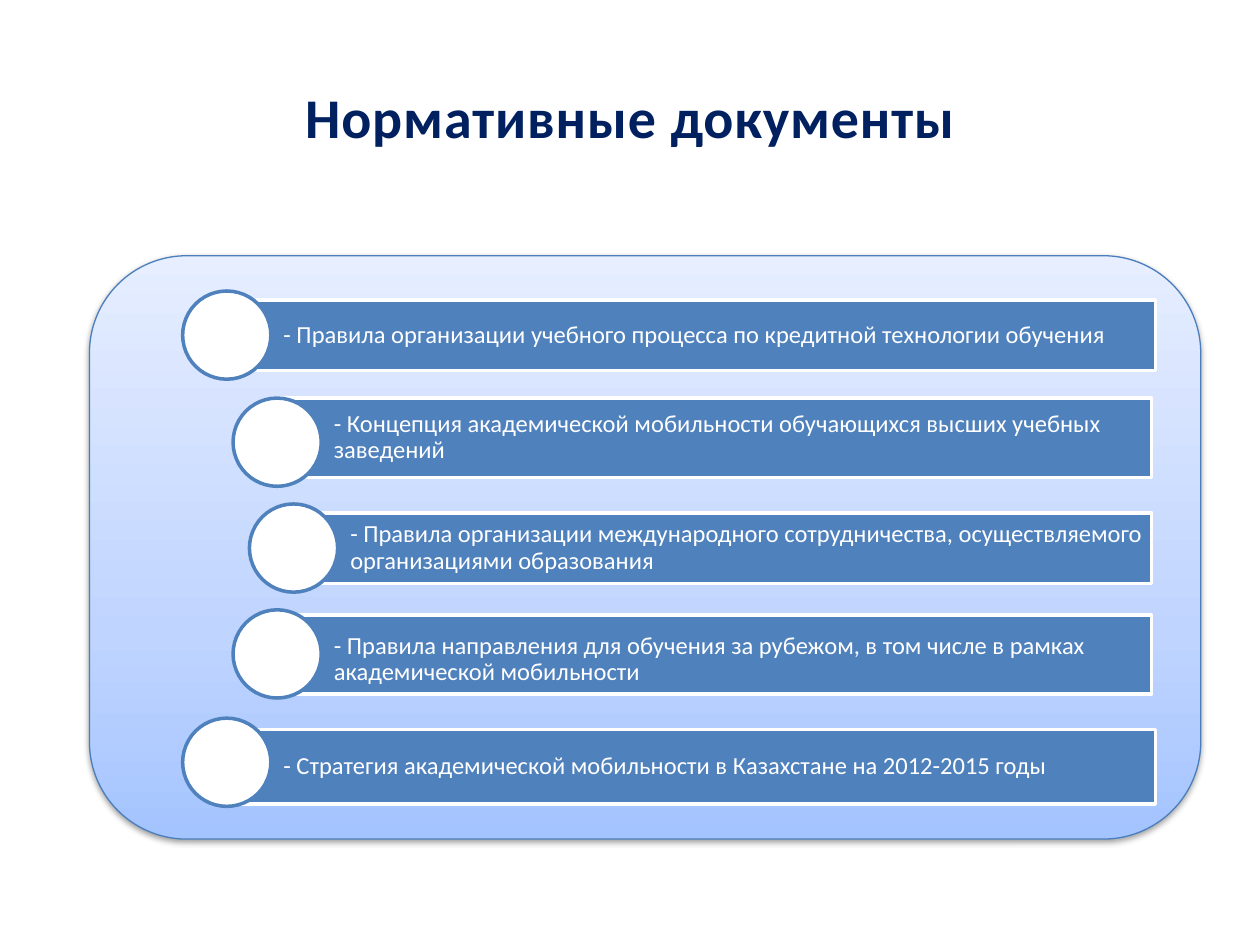
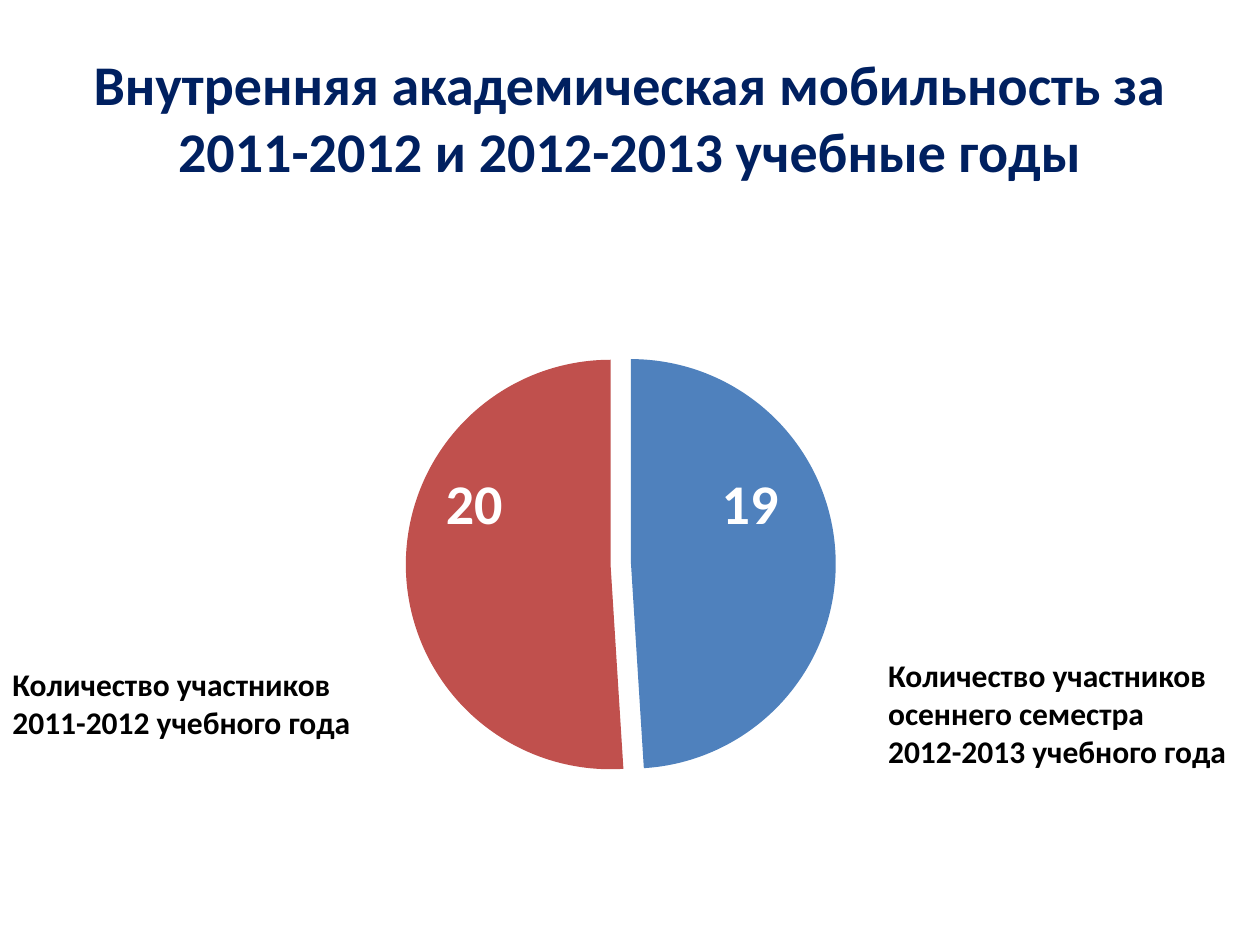
from lxml import etree
from pptx import Presentation
from pptx.chart.data import CategoryChartData
from pptx.dml.color import RGBColor
from pptx.enum.chart import XL_CHART_TYPE as CHART
from pptx.enum.shapes import MSO_SHAPE as SHAPE
from pptx.enum.text import MSO_ANCHOR as ANCHOR, PP_ALIGN as ALIGN
from pptx.oxml import parse_xml
from pptx.oxml.ns import nsdecls, qn
from pptx.util import Inches, Pt

FONT = "Calibri"
COLORS = {
    "white": "FFFFFF", "black": "000000", "navy": "002060",
    "blue": "4F81BD", "red": "C0504D", "edge": "4B7EBC",
    "panel_low": "A4C4FF", "panel_mid": "BFD4FF", "panel_high": "E6EEFF",
}


def rgb(name):
    return RGBColor.from_string(COLORS[name])


class Deck:
    """Holds the shared style and the current slide."""

    def __init__(self):
        self.prs = Presentation()
        self.prs.slide_width, self.prs.slide_height = Inches(10), Inches(7.5)
        self.s = None

    def new_slide(self):
        self.s = self.prs.slides.add_slide(self.prs.slide_layouts[6])

    def shape(self, kind, x, y, w, h, fill="white", line=None, width=2):
        sp = self.s.shapes.add_shape(kind, Inches(x), Inches(y), Inches(w), Inches(h))
        sp.shadow.inherit = False
        sp.fill.solid()
        sp.fill.fore_color.rgb = rgb(fill)
        if line:
            sp.line.color.rgb = rgb(line)
            sp.line.width = Pt(width)
        else:
            sp.line.fill.background()
        return sp

    def add_text(self, sp, text, size, color, bold=False, align=ALIGN.LEFT, spc=0):
        tf = sp.text_frame
        tf.word_wrap = True
        p = tf.paragraphs[0]
        p.alignment = align
        for i, line in enumerate(text.split("\n")):
            if i:
                p.add_line_break()
            r = p.add_run()
            r.text = line
            r.font.name, r.font.size, r.font.bold = FONT, Pt(size), bold
            r.font.color.rgb = rgb(color)
            if spc:
                r.font._element.set("spc", str(spc))
        return tf

    def text(self, x, y, w, h, text, size=18, color="black", **style):
        sp = self.s.shapes.add_textbox(Inches(x), Inches(y), Inches(w), Inches(h))
        return self.add_text(sp, text, size, color, bold=True, **style)

    def title(self, text, spc=0):
        tf = self.text(0.5, 0.3, 9, 1.25, text, 32, "navy", align=ALIGN.CENTER, spc=spc)
        tf.vertical_anchor = ANCHOR.MIDDLE

    def veil(self):
        sp = self.shape(SHAPE.RECTANGLE, 0, 1.55, 10, 5.75)
        color = sp._element.spPr.find(qn("a:solidFill"))[0]
        etree.SubElement(color, qn("a:alpha"), val="92000")

    def panel(self, x, y, w, h):
        sp = self.shape(SHAPE.ROUNDED_RECTANGLE, x, y, w, h, line="edge", width=0.75)
        spPr = sp._element.spPr
        stops = "".join(
            f'<a:gs pos="{pos}000"><a:srgbClr val="{COLORS[name]}"/></a:gs>'
            for pos, name in ((0, "panel_low"), (35, "panel_mid"), (100, "panel_high")))
        spPr.replace(spPr.find(qn("a:solidFill")), parse_xml(
            f'<a:gradFill {nsdecls("a")} rotWithShape="1"><a:gsLst>{stops}</a:gsLst>'
            '<a:lin ang="16200000" scaled="0"/></a:gradFill>'))
        spPr.find(qn("a:effectLst")).append(parse_xml(
            f'<a:outerShdw {nsdecls("a")} blurRad="{Pt(3.1)}" dist="{Pt(1.6)}" '
            'dir="5400000" rotWithShape="0"><a:srgbClr val="000000">'
            '<a:alpha val="38000"/></a:srgbClr></a:outerShdw>'))

    def band(self, x, y, right, h, circle_y, text, drop=0):
        """Bar with text, and a circle centred on its left edge."""
        sp = self.shape(SHAPE.RECTANGLE, x, y, right - x, h, "blue", "white")
        tf = self.add_text(sp, text, 14, "white")
        tf.vertical_anchor = ANCHOR.MIDDLE
        tf.margin_left = Inches(0.45)
        tf.margin_right = tf.margin_bottom = Inches(0.03)
        tf.margin_top = Inches(0.03 + 2 * drop)
        tf.paragraphs[0].line_spacing = 0.9
        d = 0.7
        self.shape(SHAPE.OVAL, x - d / 2, circle_y, d, d, "white", "blue")

    def pie(self, x, y, w, h, values, colors, explosion, plot):
        data = CategoryChartData()
        data.categories = [str(i + 1) for i in range(len(values))]
        data.add_series("Series 1", values)
        chart = self.s.shapes.add_chart(
            CHART.PIE, Inches(x), Inches(y), Inches(w), Inches(h), data).chart
        chart.has_legend = chart.has_title = False
        chart.font.name, chart.font.size = FONT, Pt(18)
        chart.font.color.rgb = rgb("black")
        pie = chart.plots[0]
        pie.vary_by_categories = True
        ser = pie.series[0]
        for i, color in enumerate(colors):
            fill = ser.points[i].format.fill
            fill.solid()
            fill.fore_color.rgb = rgb(color)
        # Explosion precedes the data points in the series
        ser._element.find(qn("c:dPt")).addprevious(parse_xml(
            f'<c:explosion {nsdecls("c")} val="{explosion}"/>'))
        # Fixed plot area, in fractions of the chart
        area = chart._chartSpace.chart.plotArea
        for old in area.findall(qn("c:layout")):
            area.remove(old)
        spots = "".join(f'<c:{k} val="{v}"/>' for k, v in zip("xywh", plot))
        area.insert(0, parse_xml(
            f'<c:layout {nsdecls("c")}><c:manualLayout><c:layoutTarget val="inner"/>'
            f'<c:xMode val="edge"/><c:yMode val="edge"/>{spots}'
            '</c:manualLayout></c:layout>'))


def documents_slide(deck):
    deck.new_slide()
    deck.veil()
    deck.title("Нормативные документы", spc=50)
    deck.panel(0.71, 2.03, 8.82, 4.63)
    # Bands: left, top, right, height, circle top, text, text drop
    bands = [
        (1.8, 2.38, 9.17, 0.56, 2.31,
         "- Правила организации учебного процесса по кредитной технологии обучения"),
        (2.2, 3.16, 9.14, 0.63, 3.16,
         "- Концепция академической мобильности обучающихся высших учебных заведений"),
        (2.33, 4.07, 9.14, 0.56, 4,
         "- Правила организации международного сотрудничества, "
         "осуществляемого организациями образования"),
        (2.2, 4.88, 9.14, 0.63, 4.84,
         "- Правила направления для обучения за рубежом, "
         "в том числе в рамках академической мобильности", 0.04),
        (1.8, 5.79, 9.17, 0.59, 5.7,
         "- Стратегия академической мобильности в Казахстане на 2012-2015 годы"),
    ]
    for band in bands:
        deck.band(*band)


def mobility_slide(deck):
    deck.new_slide()
    deck.title("Внутренняя академическая мобильность за "
               "2011-2012 и 2012-2013 учебные годы")
    deck.veil()
    deck.pie(1.72, 2.34, 6.48, 4.32, (49, 51), ("blue", "red"),
             explosion=5, plot=(0.23, 0.1, 0.53, 0.79))
    # Captions beside the pie
    deck.text(0, 5.23, 2.89, 0.71, "Количество участников 2011-2012 учебного года")
    deck.text(6.95, 5.16, 3.05, 1.01,
              "Количество участников осеннего семестра\n2012-2013 учебного года")
    # Participant counts on the slices
    for x, count in ((5.63, "19"), (3.44, "20")):
        deck.text(x, 3.67, 0.7, 0.64, count, 32, "white")


def main():
    deck = Deck()
    documents_slide(deck)
    mobility_slide(deck)
    deck.prs.save("out.pptx")


if __name__ == "__main__":
    main()
